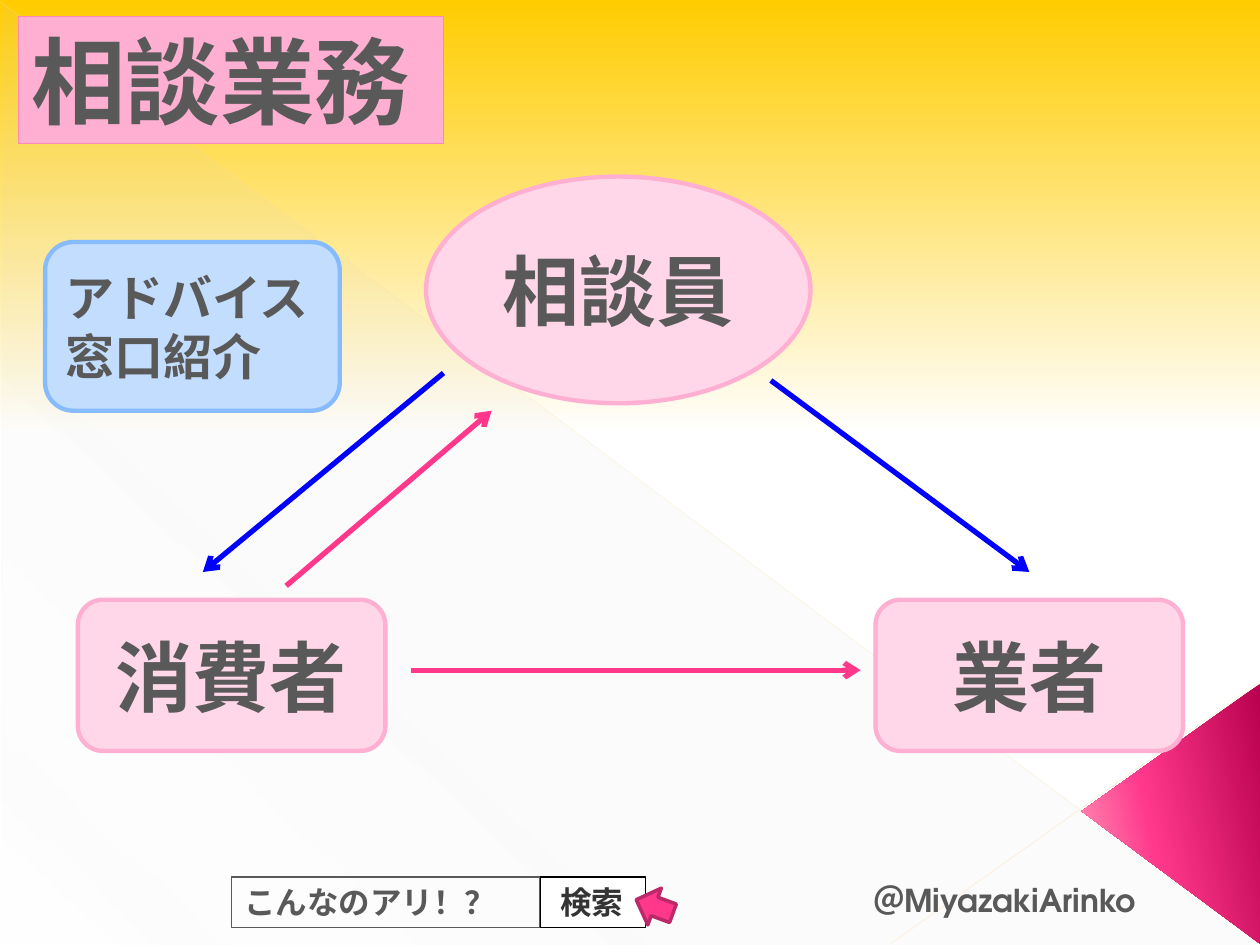
import pptx
import pptx.dml.color
import pptx.enum.shapes
import pptx.enum.text
import pptx.oxml.ns
import pptx.util
from lxml import etree

Cm = pptx.util.Cm
Pt = pptx.util.Pt
RGB = pptx.dml.color.RGBColor.from_string
qn = pptx.oxml.ns.qn
SHAPE = pptx.enum.shapes.MSO_SHAPE
ALIGN = pptx.enum.text.PP_ALIGN
ANCHOR = pptx.enum.text.MSO_ANCHOR

COLOURS = {
    "yellow": "FFCC00", "white": "FFFFFF", "black": "000000",
    "veil": "D2D2D2", "cream": "FFDFB4", "pale cream": "FFE2BD",
    "crimson": "B8014E", "pink": "FF388C", "salmon": "FF9CB9",
    "dark pink": "BD2968", "light pink": "FFD7E8", "rose": "FFAFD1",
    "title edge": "FF88BA", "light blue": "C3DDFF", "sky": "87BBFF",
    "blue": "0000FF", "grey": "595959", "dark grey": "343434",
}
LATIN = "TeX Gyre Adventor"
JAPANESE = "Noto Sans CJK JP"


def set_gradient(fill, owner, stops, angle):
    """Fill with (position %, colour, opacity %) stops at a clockwise angle."""
    fill.gradient()
    fill.gradient_angle = 360 - angle
    stop_list = owner.find(".//" + qn("a:gsLst"))
    for old_stop in list(stop_list):
        stop_list.remove(old_stop)
    for position, colour, opacity in stops:
        stop = etree.SubElement(stop_list, qn("a:gs"), pos=str(position * 1000))
        value = etree.SubElement(stop, qn("a:srgbClr"), val=COLOURS[colour])
        if opacity < 100:
            etree.SubElement(value, qn("a:alpha"), val=str(opacity * 1000))


def add_box(kind, place, fill, edge, width, lines=(), size=18, font=LATIN,
            colour="grey", align=ALIGN.LEFT, anchor=ANCHOR.TOP):
    shape = slide.shapes.add_shape(kind, *[Cm(length) for length in place])
    shape.shadow.inherit = False
    if fill:
        shape.fill.solid()
        shape.fill.fore_color.rgb = RGB(COLOURS[fill])
    else:
        shape.fill.background()
    if edge:
        shape.line.color.rgb = RGB(COLOURS[edge])
        shape.line.width = Pt(width)
    else:
        shape.line.fill.background()
    frame = shape.text_frame
    frame.word_wrap = True
    frame.vertical_anchor = anchor
    for index, line in enumerate(lines):
        paragraph = frame.add_paragraph() if index else frame.paragraphs[0]
        paragraph.alignment = align
        run = paragraph.add_run()
        run.text = line
        run.font.size = Pt(size)
        run.font.bold = True
        run.font.name = font
        run.font.color.rgb = RGB(COLOURS[colour])
        etree.SubElement(run.font._element, qn("a:ea"), typeface=JAPANESE)
    return shape


presentation = pptx.Presentation()
presentation.slide_width = Cm(25.4)
presentation.slide_height = Cm(19.05)
slide = presentation.slides.add_slide(presentation.slide_layouts[6])

# Backdrop
set_gradient(slide.background.fill, slide._element,
             [(0, "yellow", 100), (46, "white", 100), (100, "white", 100)], 90)
veil = add_box(SHAPE.RIGHT_TRIANGLE, (0.03, 0.05, 25.35, 19), None, None, 0)
set_gradient(veil.fill, veil._element,
             [(0, "veil", 10), (70, "veil", 8), (100, "veil", 1)], 133)

# Faint diagonals, then the arrows of the scheme
connectors = [
    (0, 0.03, 25.37, 19.02, "cream", 0.39, 35, False),
    (25.4, 13.74, 17.96, 19.02, "pale cream", 0.47, 45, False),
    (8.94, 7.52, 4.09, 11.53, "blue", 3, 100, True),
    (5.77, 11.81, 9.91, 8.28, "pink", 3, 100, True),
    (8.28, 13.51, 17.35, 13.51, "pink", 3, 100, True),
    (15.54, 7.67, 20.75, 11.53, "blue", 3, 100, True),
]
for x1, y1, x2, y2, colour, width, opacity, has_head in connectors:
    connector = slide.shapes.add_connector(
        pptx.enum.shapes.MSO_CONNECTOR.STRAIGHT, Cm(x1), Cm(y1), Cm(x2), Cm(y2))
    connector.line.color.rgb = RGB(COLOURS[colour])
    connector.line.width = Pt(width)
    outline = connector.line._get_or_add_ln()
    if opacity < 100:
        etree.SubElement(outline.find(".//" + qn("a:srgbClr")), qn("a:alpha"),
                         val=str(opacity * 1000))
    if has_head:
        etree.SubElement(outline, qn("a:tailEnd"), type="arrow")
    etree.SubElement(connector._element.spPr, qn("a:effectLst"))

corner = add_box(SHAPE.ISOSCELES_TRIANGLE, (20.98, 14.6, 5.26, 3.61), None, None, 0)
corner.rotation = 270
corner.adjustments[0] = 0.51
set_gradient(corner.fill, corner._element,
             [(0, "crimson", 100), (60, "pink", 100), (100, "salmon", 100)], 258)

# Search bar and signature
add_box(SHAPE.RECTANGLE, (4.67, 17.68, 6.22, 1.02), None, "grey", 0.75,
        ["こんなのアリ！？"])
add_box(SHAPE.RECTANGLE, (10.9, 17.68, 2.11, 1.02), "white", "black", 0.75,
        [" 検索"], colour="dark grey")
pointer = add_box(SHAPE.LEFT_ARROW, (12.8, 17.88, 0.79, 0.79), "pink", "dark pink", 2)
pointer.rotation = 20.3
add_box(SHAPE.RECTANGLE, (17.35, 17.63, 6.43, 1.02), None, None, 0,
        ["＠MiyazakiArinko"])

# People in the scheme
people = [
    (SHAPE.OVAL, (8.59, 3.56, 7.75, 4.57), "相談員"),
    (SHAPE.ROUNDED_RECTANGLE, (1.57, 12.09, 6.2, 3.05), "消費者"),
    (SHAPE.ROUNDED_RECTANGLE, (17.65, 12.09, 6.2, 3.05), "業者"),
]
for kind, place, name in people:
    add_box(kind, place, "light pink", "rose", 2.5, [name], size=44,
            align=ALIGN.CENTER, anchor=ANCHOR.MIDDLE)

# Advice and title
add_box(SHAPE.ROUNDED_RECTANGLE, (0.91, 4.88, 5.94, 3.4), "light blue", "sky", 2.5,
        ["アドバイス", "窓口紹介"], size=28, font=JAPANESE, anchor=ANCHOR.MIDDLE)
add_box(SHAPE.RECTANGLE, (0.38, 0.33, 8.56, 2.57), "rose", "title edge", 0.75,
        ["相談業務"], size=54, font="Arial")

presentation.save("out.pptx")
